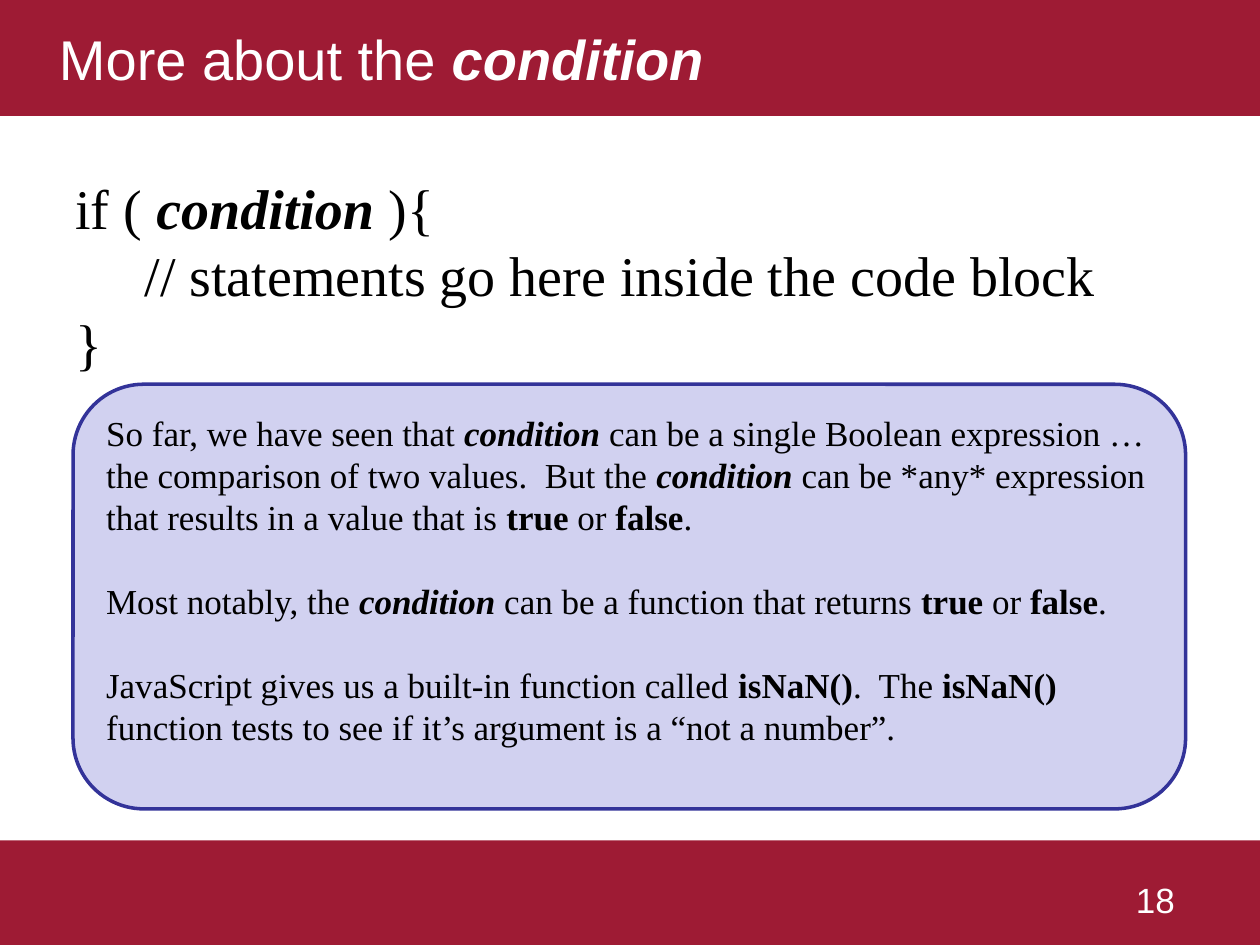
import dataclasses

import pptx
import pptx.dml.color
import pptx.enum.shapes
import pptx.enum.text
import pptx.util

Inches = pptx.util.Inches
Pt = pptx.util.Pt
Shapes = pptx.enum.shapes.MSO_SHAPE
Align = pptx.enum.text.PP_ALIGN
Anchor = pptx.enum.text.MSO_ANCHOR


@dataclasses.dataclass(frozen=True)
class Theme:
    crimson: str = "9E1B34"
    white: str = "FFFFFF"
    black: str = "000000"
    lavender: str = "D1D1F0"
    indigo: str = "333399"
    heading_font: str = "Arial"
    body_font: str = "Times New Roman"
    large: int = 32
    small: int = 20
    outline: int = 2


def rgb(value):
    return pptx.dml.color.RGBColor.from_string(value)


def plain(text):
    return text, False, False


def bold(text):
    return text, True, False


def term(text):
    return text, True, True


class SlideBuilder:
    def __init__(self, slide, theme):
        self.slide = slide
        self.theme = theme

    def panel(self, box, preset, fill, line=None):
        panel = self.slide.shapes.add_shape(preset, *map(Inches, box))
        panel.shadow.inherit = False
        panel.fill.solid()
        panel.fill.fore_color.rgb = rgb(fill)
        if line:
            panel.line.color.rgb = rgb(line)
            panel.line.width = Pt(self.theme.outline)
        else:
            panel.line.fill.background()
        return panel

    def text_box(self, box):
        return self.slide.shapes.add_textbox(*map(Inches, box))

    def add_text(self, holder, paragraphs, size, font, color, align=Align.LEFT,
                 anchor=Anchor.TOP, gap=0, indents=()):
        frame = holder.text_frame
        frame.word_wrap = True
        frame.vertical_anchor = anchor
        for index, runs in enumerate(paragraphs):
            paragraph = frame.add_paragraph() if index else frame.paragraphs[0]
            paragraph.alignment = align
            if index:
                paragraph.space_before = Pt(gap)
            if index < len(indents) and indents[index]:
                properties = paragraph._p.get_or_add_pPr()
                properties.set("marL", str(Inches(indents[index])))
                properties.set("indent", "0")
            for text, is_bold, is_italic in runs:
                run = paragraph.add_run()
                run.text = text
                run.font.name = font
                run.font.size = Pt(size)
                run.font.bold = is_bold
                run.font.italic = is_italic
                run.font.color.rgb = rgb(color)


def main():
    theme = Theme()
    deck = pptx.Presentation()
    deck.slide_width, deck.slide_height = Inches(10), Inches(7.5)
    builder = SlideBuilder(deck.slides.add_slide(deck.slide_layouts[6]), theme)

    builder.panel((0, 6.67, 10, 0.83), Shapes.RECTANGLE, theme.crimson)
    title = builder.panel((0, 0, 10, 0.92), Shapes.RECTANGLE, theme.crimson)
    builder.add_text(title, [[plain("More about the "), term("condition")]],
                     theme.large, theme.heading_font, theme.white,
                     anchor=Anchor.MIDDLE, indents=[0.37])

    page_number = builder.text_box((7.17, 6.92, 2.33, 0.33))
    builder.add_text(page_number, [[plain("18 ")]], theme.small,
                     theme.heading_font, theme.white, align=Align.RIGHT)

    code = builder.text_box((0.5, 1.33, 8.67, 1.72))
    builder.add_text(code, [
        [plain("if ( "), term("condition"), plain(" ){")],
        [plain("// statements go here inside the code block")],
        [plain("}")],
    ], theme.large, theme.body_font, theme.black, indents=[0, 0.55, 0])

    explanation = builder.panel((0.58, 3.05, 8.83, 3.37), Shapes.ROUNDED_RECTANGLE,
                                theme.lavender, theme.indigo)
    builder.add_text(explanation, [
        [plain("So far, we have seen that "), term("condition"),
         plain(" can be a single Boolean expression … the comparison of two values.  But the "),
         term("condition"),
         plain(" can be *any* expression that results in a value that is "),
         bold("true "), plain("or "), bold("false"), plain(".")],
        [plain("Most notably, the "), term("condition "),
         plain("can be a function that returns "),
         bold("true"), plain(" or "), bold("false"), plain(".")],
        [plain("JavaScript gives us a built-in function called "), bold("isNaN()"),
         plain(".  The "), bold("isNaN()"),
         plain(" function tests to see if it’s argument is a “not a number”.")],
    ], theme.small, theme.body_font, theme.black, gap=24)

    deck.save("out.pptx")


if __name__ == "__main__":
    main()
